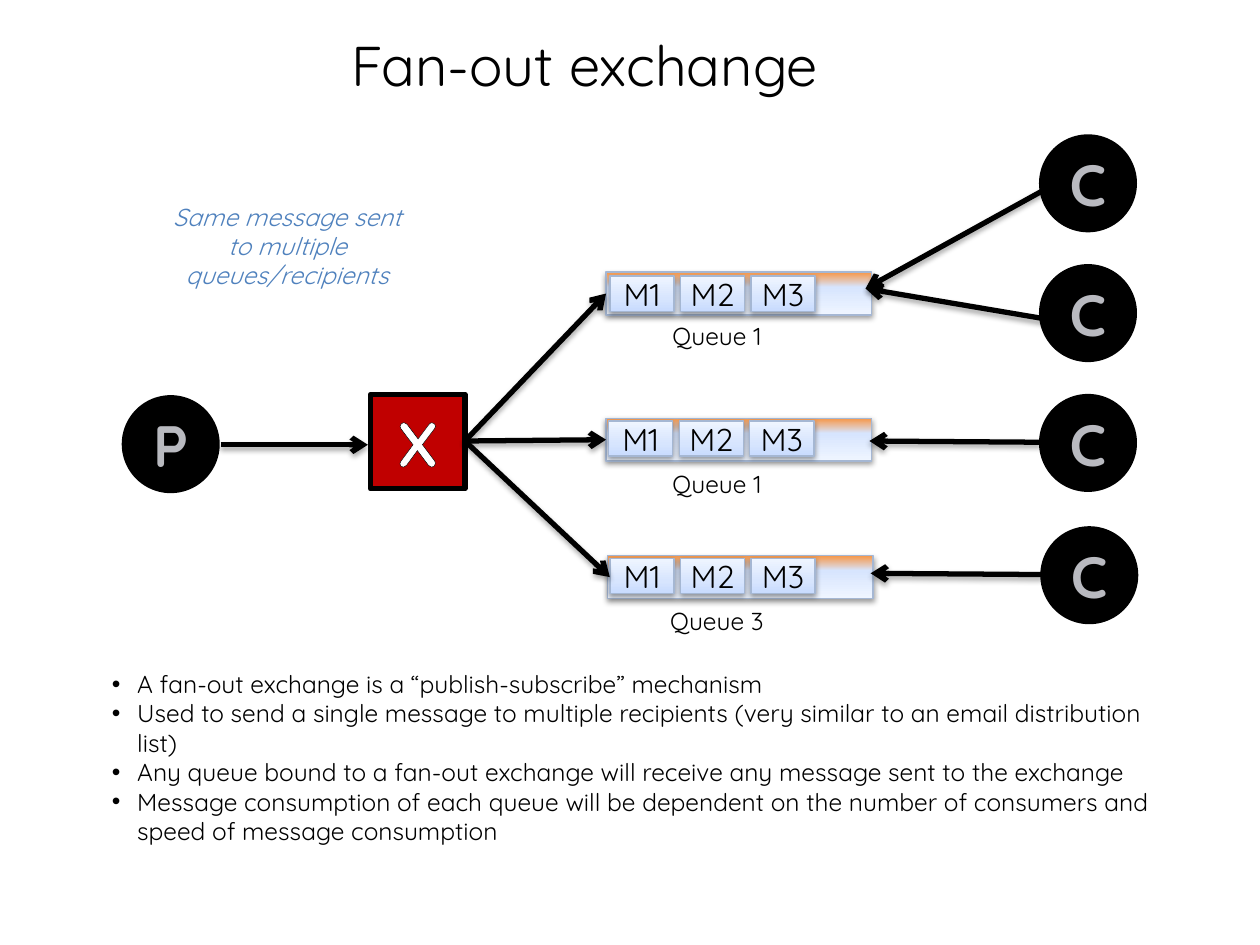
from lxml.etree import SubElement
from pptx import Presentation
from pptx.dml.color import RGBColor
from pptx.enum.shapes import MSO_CONNECTOR, MSO_SHAPE
from pptx.enum.text import MSO_ANCHOR, PP_ALIGN
from pptx.oxml import parse_xml
from pptx.oxml.ns import nsdecls, qn
from pptx.util import Pt

PX = 9144  # 100 px to the inch
FONT = "Quicksand"
COLORS = {
    "black": "000000", "white": "FFFFFF", "letter": "B9BAC0", "exchange": "C00000",
    "note": "4F81BD", "edge": "A5B7D3", "queue": "F79646", "message": "C8DBFE",
    "middle": "D7E5FE", "pale": "EFF5FF",
}
rgb = {name: RGBColor.from_string(value) for name, value in COLORS.items()}


def write(shape, *lines, size=14, color="black", bold=False, italic=False,
          align=PP_ALIGN.CENTER, anchor=MSO_ANCHOR.TOP, spacing=None,
          wrap=True, inset=None, outline=False, bullet=False):
    """Fill a shape with one paragraph per line, all in the same format."""
    frame = shape.text_frame
    frame.word_wrap = wrap
    frame.vertical_anchor = anchor
    if inset is not None:
        frame.margin_left = frame.margin_right = inset
        frame.margin_top = frame.margin_bottom = inset
    for number, line in enumerate(lines):
        paragraph = frame.add_paragraph() if number else frame.paragraphs[0]
        paragraph.alignment = align
        paragraph.line_spacing = spacing
        run = paragraph.add_run()
        run.text = line
        font = run.font
        font.name, font.size, font.bold, font.italic = FONT, Pt(size), bold, italic
        font.color.rgb = rgb[color]
        if outline:
            run._r.get_or_add_rPr().insert(0, parse_xml(
                f'<a:ln {nsdecls("a")} w="12700"><a:solidFill>'
                f'<a:srgbClr val="{COLORS["black"]}"/></a:solidFill></a:ln>'))
        if bullet:
            properties = paragraph._p.get_or_add_pPr()
            properties.set("marL", str(20 * PX))
            properties.set("indent", str(-20 * PX))
            SubElement(properties, qn("a:buFont"), typeface="Arial")
            SubElement(properties, qn("a:buChar"), char="•")


def cast_shadow(effects, distance, opacity):
    effects.append(parse_xml(
        f'<a:outerShdw {nsdecls("a")} blurRad="40000" dist="{distance}" dir="5400000" '
        f'rotWithShape="0"><a:srgbClr val="{COLORS["black"]}">'
        f'<a:alpha val="{opacity * 1000}"/></a:srgbClr></a:outerShdw>'))


prs = Presentation()
prs.slide_width, prs.slide_height = 1000 * PX, 750 * PX
shapes = prs.slides.add_slide(prs.slide_layouts[6]).shapes

# Title, note and explanation
title = shapes.add_textbox(47 * PX, 12 * PX, 834 * PX, 71 * PX)
write(title, "Fan-out exchange", size=32, anchor=MSO_ANCHOR.BOTTOM, spacing=0.9)

note = shapes.add_textbox(122 * PX, 155 * PX, 212 * PX, 81 * PX)
write(note, "Same message sent to multiple queues/recipients", color="note", italic=True)

explanation = shapes.add_textbox(79 * PX, 526 * PX, 862 * PX, 128 * PX)
write(explanation,
      "A fan-out exchange is a “publish-subscribe” mechanism",
      "Used to send a single message to multiple recipients "
      "(very similar to an email distribution list)",
      "Any queue bound to a fan-out exchange will receive any message sent to the exchange",
      "Message consumption of each queue will be dependent on the number of consumers "
      "and speed of message consumption",
      align=PP_ALIGN.LEFT, bullet=True)

# Queues, each with three messages and a caption
queues = [  # left, top, first message left, message top, caption top, caption
    (481, 216, 484, 219, 250, "Queue 1"),
    (481, 332, 483, 334, 367, "Queue 1"),
    (482, 441, 484, 443, 476, "Queue 3"),
]
for left, top, message_left, message_top, caption_top, caption in queues:
    boxes = [(left, top, 211, 34, "queue", 90, "")]
    boxes += [(message_left + 56 * i, message_top, 51, 28, "message", 270, f"M{i + 1}")
              for i in range(3)]
    for x, y, width, height, start, angle, label in boxes:
        box = shapes.add_shape(MSO_SHAPE.RECTANGLE, x * PX, y * PX, width * PX, height * PX)
        box.line.color.rgb = rgb["edge"]
        box.line.width = Pt(0.75)
        box.fill.gradient()
        gradient = box._element.spPr.find(qn("a:gradFill"))
        gradient.find(qn("a:lin")).set("ang", str(angle * 60000))
        stops = gradient.find(qn("a:gsLst"))
        stops.clear()
        for position, color in ((0, start), (35, "middle"), (100, "pale")):
            stop = SubElement(stops, qn("a:gs"), pos=str(position * 1000))
            SubElement(stop, qn("a:srgbClr"), val=COLORS[color])
        box.shadow.inherit = False
        cast_shadow(box._element.spPr.find(qn("a:effectLst")), 20000, 38)
        if label:
            write(box, label, size=18, anchor=MSO_ANCHOR.MIDDLE, wrap=False, inset=0)
    caption_box = shapes.add_textbox(518 * PX, caption_top * PX, 102 * PX, 34 * PX)
    write(caption_box, caption)

# Producer, exchange and consumers
nodes = [("P", 98, 315), ("X", 294, 313),
         ("C", 826, 108), ("C", 826, 211), ("C", 826, 314), ("C", 827, 419)]
for letter, left, top in nodes:
    is_exchange = letter == "X"
    outline_shape = MSO_SHAPE.RECTANGLE if is_exchange else MSO_SHAPE.OVAL
    node = shapes.add_shape(outline_shape, left * PX, top * PX, 75 * PX, 75 * PX)
    node.shadow.inherit = False
    node.fill.solid()
    node.fill.fore_color.rgb = rgb["exchange" if is_exchange else "black"]
    node.line.color.rgb = rgb["black"]
    node.line.width = Pt(3 if is_exchange else 2)
    write(node, letter, size=36 if is_exchange else 33.3,
          color="white" if is_exchange else "letter", bold=True,
          anchor=MSO_ANCHOR.MIDDLE, wrap=False, inset=0, outline=True)

# Arrows from producer to exchange, exchange to queues, consumers to queues
arrows = [
    (175, 353, 292, 353),
    (369, 350, 481, 233), (369, 350, 481, 349), (369, 350, 484, 458),
    (830, 150, 687, 229), (829, 253, 687, 229), (826, 351, 690, 350), (827, 456, 691, 455),
]
for ends in arrows:
    arrow = shapes.add_connector(MSO_CONNECTOR.STRAIGHT, *(end * PX for end in ends))
    arrow.line.color.rgb = rgb["black"]
    arrow.line.width = Pt(3)
    properties = arrow._element.spPr
    SubElement(properties.find(qn("a:ln")), qn("a:tailEnd"), type="arrow")
    cast_shadow(SubElement(properties, qn("a:effectLst")), 23000, 35)

prs.save("out.pptx")
